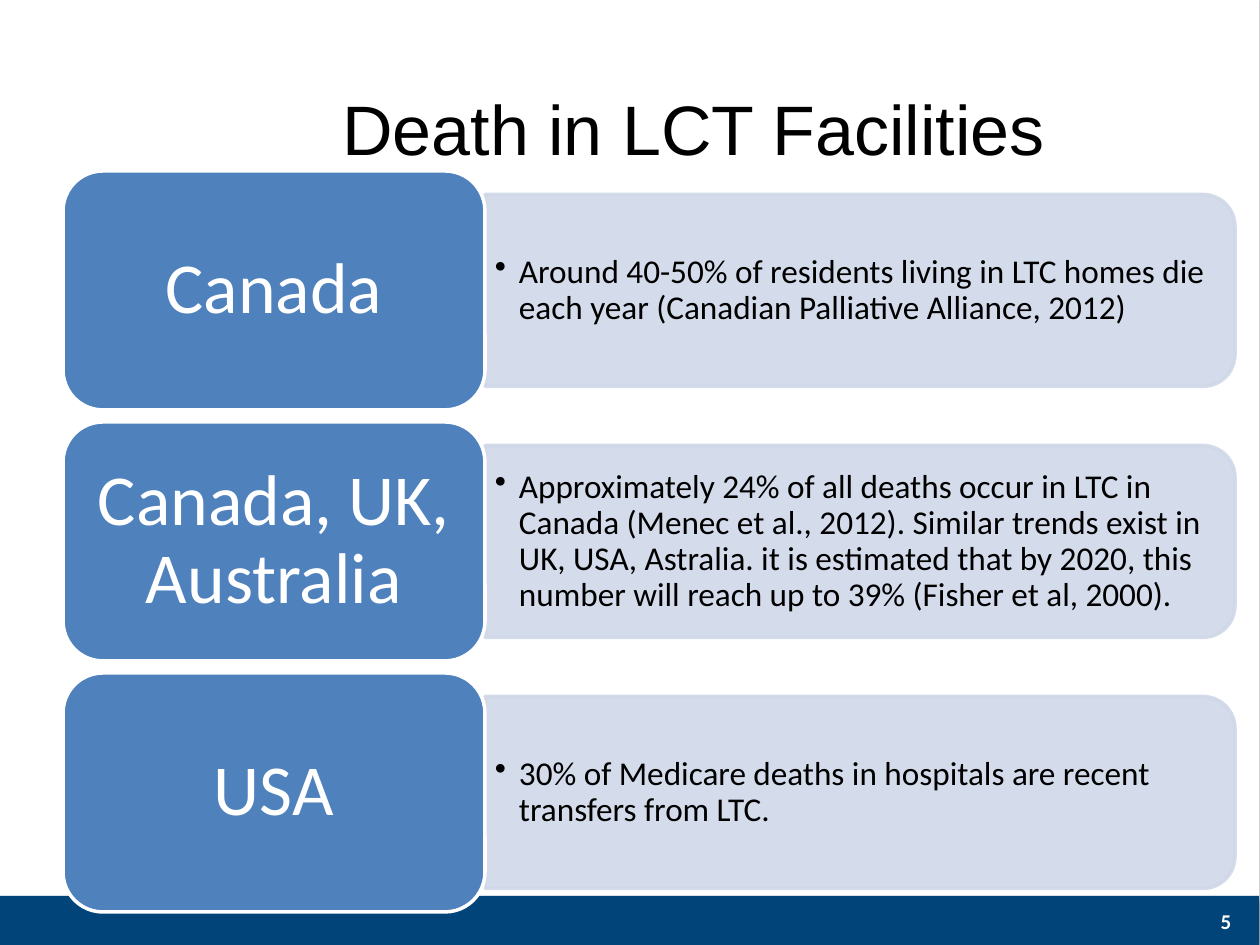
"""Build the slide on deaths in long-term care facilities."""
from lxml import etree
from pptx import Presentation
from pptx.dml.color import RGBColor
from pptx.enum.shapes import MSO_SHAPE
from pptx.enum.text import MSO_ANCHOR, PP_ALIGN
from pptx.oxml import parse_xml
from pptx.oxml.ns import qn
from pptx.util import Pt

RECT = MSO_SHAPE.RECTANGLE
ROUND = MSO_SHAPE.ROUNDED_RECTANGLE
ROUND_TOP = MSO_SHAPE.ROUND_2_SAME_RECTANGLE
CENTER, LEFT = PP_ALIGN.CENTER, PP_ALIGN.LEFT
MIDDLE = MSO_ANCHOR.MIDDLE

TITLE = "Death in LCT Facilities"
PAGE = "5"
ROWS = [
    ("Canada",
     "Around 40-50% of residents living in LTC homes die each year "
     "(Canadian Palliative Alliance, 2012)"),
    ("Canada, UK, Australia",
     "Approximately 24% of all deaths occur in LTC in Canada (Menec et al., 2012). "
     "Similar trends exist in UK, USA, Astralia. it is estimated that by 2020, "
     "this number will reach up to 39% (Fisher et al, 2000)."),
    ("USA",
     "30% of Medicare deaths in hospitals are recent transfers from LTC."),
]
COLORS = {"white": "FFFFFF", "black": "000000", "navy": "004479",
          "blue": "4F81BD", "pale": "D0D8E8"}

W, H = 1260, 945
BLOCK_X, BLOCK_Y, BLOCK_W, BLOCK_H = 63, 171, 422, 239
PITCH = 251
PANEL_X, PANEL_W, PANEL_H = BLOCK_X + BLOCK_W, 750, 192
NOTE_W, NOTE_H = 741, 173
SHADOW = (
    '<a:effectLst xmlns:a="http://schemas.openxmlformats.org/drawingml/2006/main">'
    '<a:outerShdw blurRad="39370" dist="22860" dir="5400000" rotWithShape="0">'
    '<a:srgbClr val="000000"><a:alpha val="35000"/></a:srgbClr>'
    '</a:outerShdw></a:effectLst>')


def px(n):
    return int(n * 914400 / 126)


def rgb(name):
    return RGBColor.from_string(COLORS[name])


def add_box(kind, x, y, w, h, fill, line=None):
    sp = s.shapes.add_shape(kind, px(x), px(y), px(w), px(h))
    sp.shadow.inherit = False
    sp.fill.solid()
    sp.fill.fore_color.rgb = rgb(fill)
    if line:
        sp.line.color.rgb = rgb(line)
        sp.line.width = Pt(2)
    else:
        sp.line.fill.background()
    return sp


def add_base(x, y, w, h, fill):
    pr = add_box(RECT, x, y, w, h, fill)._element.spPr
    pr.replace(pr.find(qn("a:effectLst")), parse_xml(SHADOW))


def set_alpha(color, percent):
    for clr in color.iter(qn("a:srgbClr")):
        etree.SubElement(clr, qn("a:alpha")).set("val", str(percent * 1000))


def write(sp, text, size, color, font="Calibri", align=CENTER, bold=False,
          inset=(13, 6), spacing=None):
    tf = sp.text_frame
    tf.word_wrap = True
    tf.vertical_anchor = MIDDLE
    tf.margin_left = tf.margin_right = px(inset[0])
    tf.margin_top = tf.margin_bottom = px(inset[1])
    p = tf.paragraphs[0]
    p.alignment = align
    if spacing:
        p.line_spacing = spacing
    r = p.add_run()
    r.text = text
    r.font.name, r.font.size, r.font.bold = font, Pt(size), bold
    r.font.color.rgb = rgb(color)
    return p


def add_text(x, y, w, h, *args, **kwargs):
    tb = s.shapes.add_textbox(px(x), px(y), px(w), px(h))
    return write(tb, *args, **kwargs)


def add_bullet(p, indent):
    pr = p._p.get_or_add_pPr()
    pr.set("marL", str(px(indent)))
    pr.set("indent", str(-px(indent)))
    etree.SubElement(pr, qn("a:buChar")).set("char", "•")


prs = Presentation()
prs.slide_width, prs.slide_height = px(W), px(H)
s = prs.slides.add_slide(prs.slide_layouts[6])

add_base(-1, -4, W, 949, "white")
add_base(-1, 896, W, 49, "navy")
add_text(190, 48, 1007, 158, TITLE, 40, "black", font="Arial")

for i, (place, note) in enumerate(ROWS):
    top = BLOCK_Y + i * PITCH
    mid = top + BLOCK_H / 2
    panel = add_box(ROUND_TOP, PANEL_X + (PANEL_W - PANEL_H) / 2, mid - PANEL_W / 2,
                    PANEL_H, PANEL_W, "pale", "pale")
    panel.rotation = 90
    set_alpha(panel._element.spPr, 90)
    p = add_text(PANEL_X, mid - NOTE_H / 2, NOTE_W, NOTE_H, note, 19, "black",
                 align=LEFT, inset=(10, 5), spacing=0.9)
    add_bullet(p, 24)
    block = add_box(ROUND, BLOCK_X, top, BLOCK_W, BLOCK_H, "blue", "white")
    write(block, place, 41, "white", inset=(21, 11), spacing=0.9)

add_text(1194, 896, 64, 50, PAGE, 12, "white", bold=True)
prs.save("out.pptx")
